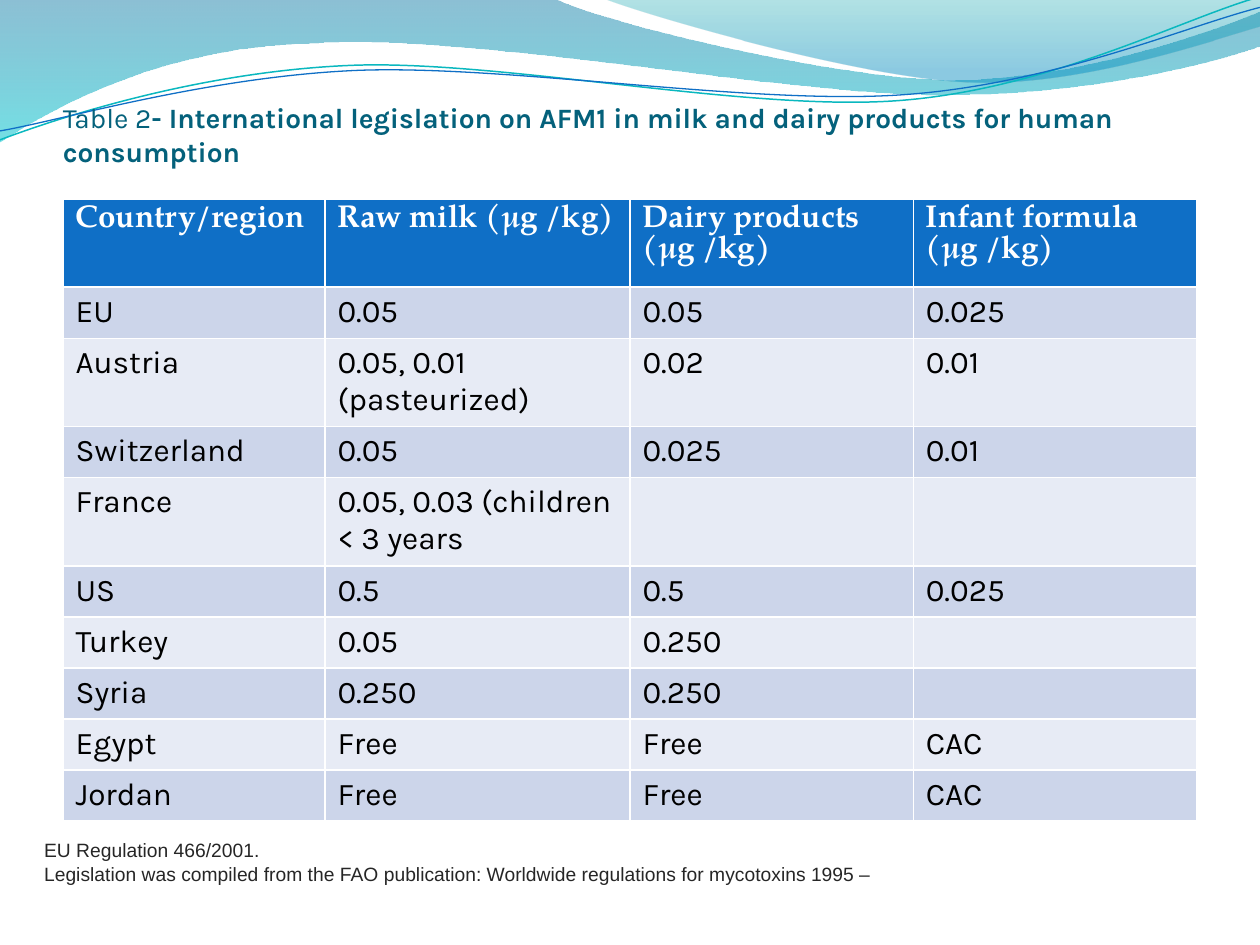
"""Builds a slide with a table of AFM1 limits under a wave banner."""
from pptx import Presentation
from pptx import util as u
from pptx.dml.color import RGBColor
from pptx.enum import text
from pptx.oxml import ns
from lxml import etree

COLORS = {
    "title": "04617B", "header": "0F6FC6", "white": "FFFFFF", "black": "000000",
    "odd": "CCD5EA", "even": "E7EBF5", "note": "262626",
    "deep": "0074A1", "cyan": "00C6CF", "teal": "00A1A9", "sky": "008BBF",
    "teal_line": "0AB8BF", "blue_line": "0F6FC6",
}
BODY, HEADING, NOTE = "Karla", "TeX Gyre Pagella", "Arial"
WIDE_WAVE = [
    (0, 0), (11.18, -0.03), (12.09, 0.43, 16.87, 1.6, 19.25, 1.6),
    (21.67, 1.6, 24.33, 0.66, 25.4, 0.23), (25.43, 0.91),
    (24.97, 1.12, 22.1, 1.93, 18.95, 1.91), (15.8, 1.91, 9.7, 0.71, 6.53, 0.86),
    (3.28, 0.91, 1.17, 2.11, -0.03, 2.87), (0, 0),
]
RIGHT_WAVE = [
    (12.17, -0.03), (12.93, 0.28, 17.32, 1.57, 19.53, 1.65),
    (21.74, 1.75, 24.41, 0.81, 25.4, 0.53), (25.4, 0), (12.17, -0.03),
]
TEAL_CURVE = [
    (0, 2.82), (1.22, 2.36, 4.01, 1.45, 7.04, 1.32),
    (10.03, 1.19, 15.06, 2.26, 18.11, 2.03), (21.16, 1.8, 23.83, 0.38, 25.35, -0.05),
]
BLUE_CURVE = [
    (0, 2.64), (1.19, 2.44, 4.17, 1.55, 7.19, 1.42),
    (10.24, 1.3, 15.16, 2.13, 18.21, 1.91), (21.23, 1.7, 23.9, 0.53, 25.4, 0.15),
]
COLUMN_WIDTHS = [5.28, 6.15, 5.71, 5.71]
ROW_HEIGHT, LAST_ROW_HEIGHT, TABLE_HEIGHT = 1.03, 0.99, 12.52
LIMITS = [
    ("Country/region", "Raw milk (μg /kg)", "Dairy products (μg /kg)", "Infant formula (μg /kg)"),
    ("EU", "0.05", "0.05", "0.025"),
    ("Austria", "0.05, 0.01 (pasteurized)", "0.02", "0.01"),
    ("Switzerland", "0.05", "0.025", "0.01"),
    ("France", "0.05, 0.03 (children < 3 years", "", ""),
    ("US", "0.5", "0.5", "0.025"),
    ("Turkey", "0.05", "0.250", ""),
    ("Syria", "0.250", "0.250", ""),
    ("Egypt", "Free", "Free", "CAC"),
    ("Jordan", "Free", "Free", "CAC"),
]


def rgb(name):
    """Return the named colour."""
    return RGBColor.from_string(COLORS[name])


def add_run(p, content, size=18, font=BODY, color="black", bold=False):
    """Add formatted text to a paragraph."""
    r = p.add_run()
    r.text = content
    r.font.size, r.font.name, r.font.bold = u.Pt(size), font, bold
    r.font.color.rgb = rgb(color)


def add_text_box(s, left, top, width, height, anchor):
    """Add an empty wrapping text box and return its text frame."""
    tf = s.shapes.add_textbox(*map(u.Cm, (left, top, width, height))).text_frame
    tf.word_wrap = True
    tf.vertical_anchor = anchor
    return tf


def add_outline(s, outline, close):
    """Add a freeform of straight segments (2 numbers) and cubic ones (6 numbers)."""
    points = [(u.Cm(seg[i]), u.Cm(seg[i + 1])) for seg in outline for i in range(0, len(seg), 2)]
    builder = s.shapes.build_freeform(*points[0])
    builder.add_line_segments(points[1:], close=close)
    sp = builder.convert_to_shape()
    sp.shadow.inherit = False
    nodes = iter(list(sp.element.iter(ns.qn("a:lnTo"))))
    for segment in outline[1:]:
        group = [next(nodes) for _ in range(len(segment) // 2)]
        if len(group) == 3:
            curve = etree.Element(ns.qn("a:cubicBezTo"))
            group[0].addprevious(curve)
            for node in group:
                curve.append(node[0])
                node.getparent().remove(node)
    return sp


def add_wave(s, outline, stops):
    """Add a wave with a translucent gradient running downwards."""
    sp = add_outline(s, outline, True)
    sp.line.fill.background()
    sp.fill.gradient()
    sp.fill.gradient_angle = 270
    for stop, (position, color, _) in zip(sp.fill.gradient_stops, stops):
        stop.position = position
        stop.color.rgb = rgb(color)
    for node, (_, _, opacity) in zip(sp.element.spPr.iter(ns.qn("a:srgbClr")), stops):
        etree.SubElement(node, ns.qn("a:alpha"), val=str(opacity * 1000))


def add_curve(s, outline, color, width):
    """Add an open curved line."""
    sp = add_outline(s, outline, False)
    sp.fill.background()
    sp.line.color.rgb = rgb(color)
    sp.line.width = u.Pt(width)


def add_limits_table(s):
    """Add the table of limits with a header and banded rows."""
    frame = s.shapes.add_table(len(LIMITS), len(COLUMN_WIDTHS), u.Cm(1.27), u.Cm(4.01),
                               u.Cm(sum(COLUMN_WIDTHS)), u.Cm(TABLE_HEIGHT))
    table = frame.table
    for column, width in zip(table.columns, COLUMN_WIDTHS):
        column.width = u.Cm(width)
    for i, row in enumerate(LIMITS):
        last = i == len(LIMITS) - 1
        table.rows[i].height = u.Cm(LAST_ROW_HEIGHT if last else ROW_HEIGHT)
        header = i == 0
        fill = "header" if header else "odd" if i % 2 else "even"
        style = {"font": HEADING, "color": "white", "bold": True} if header else {}
        for j, content in enumerate(row):
            cell = table.cell(i, j)
            cell.fill.solid()
            cell.fill.fore_color.rgb = rgb(fill)
            if content:
                add_run(cell.text_frame.paragraphs[0], content, **style)
    frame.height = u.Cm(TABLE_HEIGHT)


def add_title(s):
    """Add the table title."""
    tf = add_text_box(s, 1.27, 1.96, 22.86, 1.42, text.MSO_ANCHOR.BOTTOM)
    tf.margin_left = tf.margin_right = tf.margin_bottom = 0
    p = tf.paragraphs[0]
    add_run(p, "Table 2", size=16, color="title")
    add_run(p, "- International legislation on AFM1 in milk and dairy products for human consumption",
            size=16, color="title", bold=True)


def add_source_note(s):
    """Add the two lines on sources below the table."""
    tf = add_text_box(s, 0.64, 16.78, 22.86, 1.19, text.MSO_ANCHOR.MIDDLE)
    style = {"size": 11, "font": NOTE, "color": "note"}
    add_run(tf.paragraphs[0], "EU Regulation 466/2001.", **style)
    add_run(tf.add_paragraph(), "Legislation was compiled from the FAO publication: "
            "Worldwide regulations for mycotoxins 1995 –", **style)


def main():
    """Build and save the slide."""
    prs = Presentation()
    prs.slide_width, prs.slide_height = u.Cm(25.4), u.Cm(19.05)
    s = prs.slides.add_slide(prs.slide_layouts[6])
    add_wave(s, WIDE_WAVE, [(0, "deep", 45), (1, "cyan", 55)])
    add_wave(s, RIGHT_WAVE, [(0, "teal", 30), (0.8, "sky", 45)])
    add_curve(s, TEAL_CURVE, "teal_line", 0.85)
    add_curve(s, BLUE_CURVE, "blue_line", 0.75)
    add_title(s)
    add_limits_table(s)
    add_source_note(s)
    prs.save("out.pptx")


if __name__ == "__main__":
    main()
